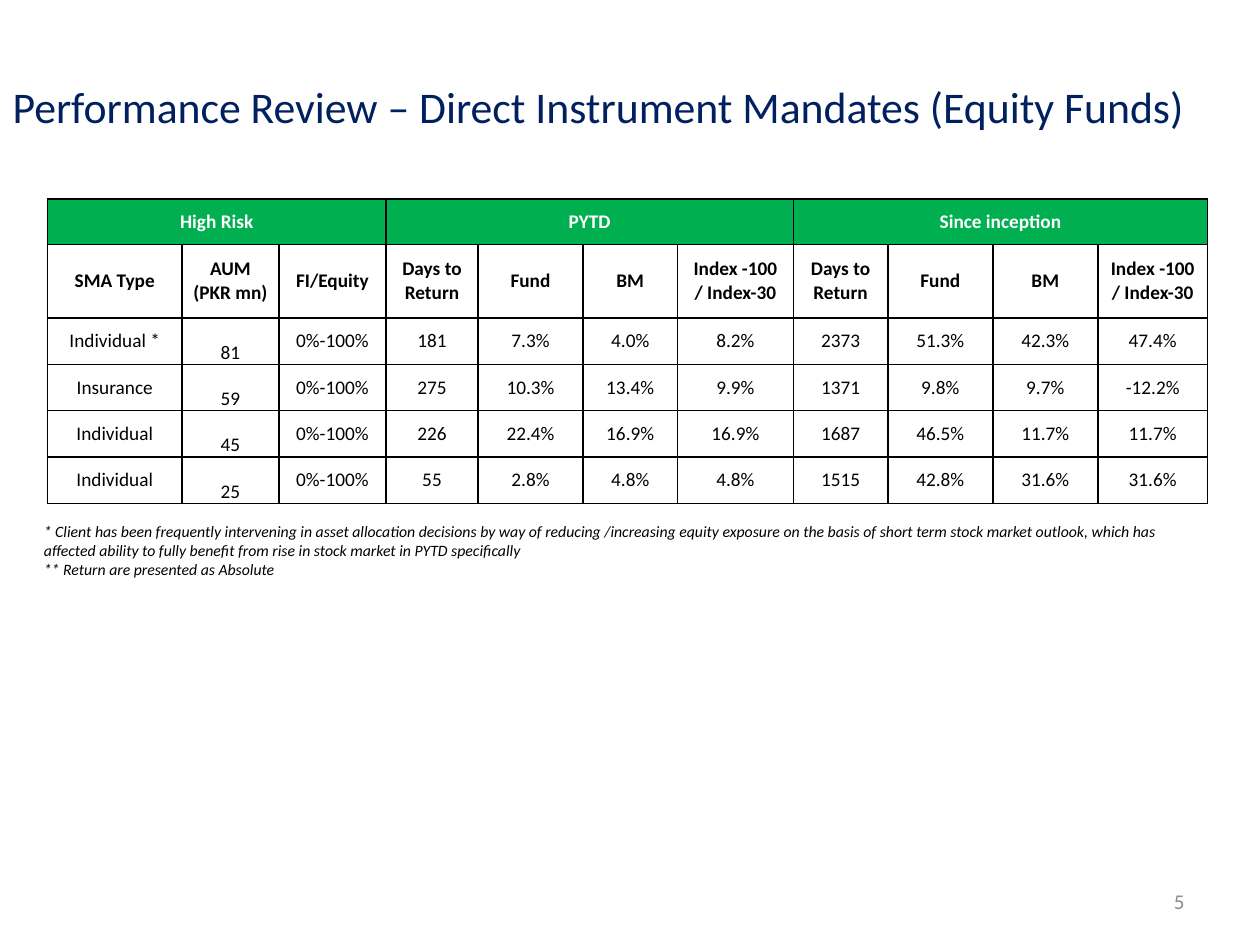
from dataclasses import dataclass

from lxml.etree import SubElement
from pptx import Presentation
from pptx.dml.color import RGBColor as Color
from pptx.enum.text import MSO_ANCHOR as Anchor, MSO_AUTO_SIZE as AutoSize, PP_ALIGN as Align
from pptx.oxml.ns import qn
from pptx.util import Pt


@dataclass(frozen=True)
class Theme:
    font: str = "Calibri"
    navy: str = "002060"
    green: str = "00B050"
    black: str = "000000"
    white: str = "FFFFFF"
    grey: str = "8C8C8C"
    title_size: int = 25
    table_size: int = 11
    note_size: int = 9
    number_size: int = 12
    border: int = 1


THEME = Theme()
TITLE = "Performance Review – Direct Instrument Mandates (Equity Funds)"
NOTES = [
    "* Client has been frequently intervening in asset allocation decisions by way of "
    "reducing /increasing equity exposure on the basis of short term stock market outlook, "
    "which has affected ability to fully benefit from rise in stock market in PYTD specifically",
    "** Return are presented as Absolute",
]
GROUPS = [("High Risk", 3), ("PYTD", 4), ("Since inception", 4)]
RETURN_HEADINGS = ["Days to\nReturn", "Fund", "BM", "Index -100\n/ Index-30"]
HEADINGS = ["SMA Type", "AUM\n(PKR mn)", "FI/Equity"] + RETURN_HEADINGS * 2
MANDATES = [
    ["Individual *", "81", "0%-100%", "181", "7.3%", "4.0%", "8.2%",
     "2373", "51.3%", "42.3%", "47.4%"],
    ["Insurance", "59", "0%-100%", "275", "10.3%", "13.4%", "9.9%",
     "1371", "9.8%", "9.7%", "-12.2%"],
    ["Individual", "45", "0%-100%", "226", "22.4%", "16.9%", "16.9%",
     "1687", "46.5%", "11.7%", "11.7%"],
    ["Individual", "25", "0%-100%", "55", "2.8%", "4.8%", "4.8%",
     "1515", "42.8%", "31.6%", "31.6%"],
]
COLUMN_WIDTHS = [76.8, 55.4, 61.2, 52.6, 60, 54, 66.2, 54, 60, 60, 62.8]
ROW_HEIGHTS = [25.9, 42] + [26.5] * len(MANDATES)
AUM_COLUMN = 1
AUM_DROP = 13


def write_text(frame, lines, size, color, align=Align.LEFT, bold=False, italic=False):
    frame.text = "\n".join(lines)
    for paragraph in frame.paragraphs:
        paragraph.alignment = align
        font = paragraph.font
        font.name, font.size = THEME.font, Pt(size)
        font.bold, font.italic = bold, italic
        font.color.rgb = Color.from_string(color)


def add_title(slide, text):
    title = slide.shapes.title
    title.left, title.top, title.width, title.height = Pt(0), Pt(39), Pt(720), Pt(43)
    frame = title.text_frame
    frame.auto_size = AutoSize.NONE
    frame.vertical_anchor = Anchor.MIDDLE
    write_text(frame, [text], THEME.title_size, THEME.navy)


def add_text(slide, box, lines, size, color, anchor=Anchor.TOP, **style):
    frame = slide.shapes.add_textbox(*map(Pt, box)).text_frame
    frame.word_wrap = True
    frame.vertical_anchor = anchor
    write_text(frame, lines, size, color, **style)


def add_borders(cell):
    properties = cell._tc.get_or_add_tcPr()
    for side in ("lnL", "lnR", "lnT", "lnB"):
        line = SubElement(properties, qn(f"a:{side}"), w=str(Pt(THEME.border)))
        fill = SubElement(line, qn("a:solidFill"))
        SubElement(fill, qn("a:srgbClr"), val=THEME.black)


def fill_cell(cell, text, color=THEME.black, bold=False, background=None, drop=0):
    cell.margin_left = cell.margin_right = cell.margin_bottom = 0
    cell.margin_top = Pt(drop)
    cell.vertical_anchor = Anchor.MIDDLE
    write_text(cell.text_frame, text.split("\n"), THEME.table_size, color, Align.CENTER, bold)
    add_borders(cell)
    if background:
        cell.fill.solid()
        cell.fill.fore_color.rgb = Color.from_string(background)
    else:
        cell.fill.background()


def add_mandate_table(slide, left, top):
    frame = slide.shapes.add_table(
        len(ROW_HEIGHTS), len(COLUMN_WIDTHS), Pt(left), Pt(top),
        Pt(sum(COLUMN_WIDTHS)), Pt(sum(ROW_HEIGHTS)))
    table = frame.table
    table.first_row = table.horz_banding = False
    for column, width in zip(table.columns, COLUMN_WIDTHS):
        column.width = Pt(width)
    for row, height in zip(table.rows, ROW_HEIGHTS):
        row.height = Pt(height)

    start = 0
    for name, span in GROUPS:
        for column in range(start, start + span):
            fill_cell(table.cell(0, column), name if column == start else "",
                      THEME.white, True, THEME.green)
        table.cell(0, start).merge(table.cell(0, start + span - 1))
        start += span
    for column, heading in enumerate(HEADINGS):
        fill_cell(table.cell(1, column), heading, bold=True)
    for row, values in enumerate(MANDATES, 2):
        for column, value in enumerate(values):
            drop = AUM_DROP if column == AUM_COLUMN else 0
            fill_cell(table.cell(row, column), value, drop=drop)


def main():
    presentation = Presentation()
    presentation.slide_width, presentation.slide_height = Pt(720), Pt(540)
    slide = presentation.slides.add_slide(presentation.slide_layouts[5])
    add_text(slide, (516, 500.5, 168, 28.8), ["5"], THEME.number_size, THEME.grey,
             Anchor.MIDDLE, align=Align.RIGHT)
    add_text(slide, (18, 294.5, 678, 40.3), NOTES, THEME.note_size, THEME.black, italic=True)
    add_title(slide, TITLE)
    add_mandate_table(slide, 27.2, 113.8)
    presentation.save("out.pptx")


if __name__ == "__main__":
    main()
